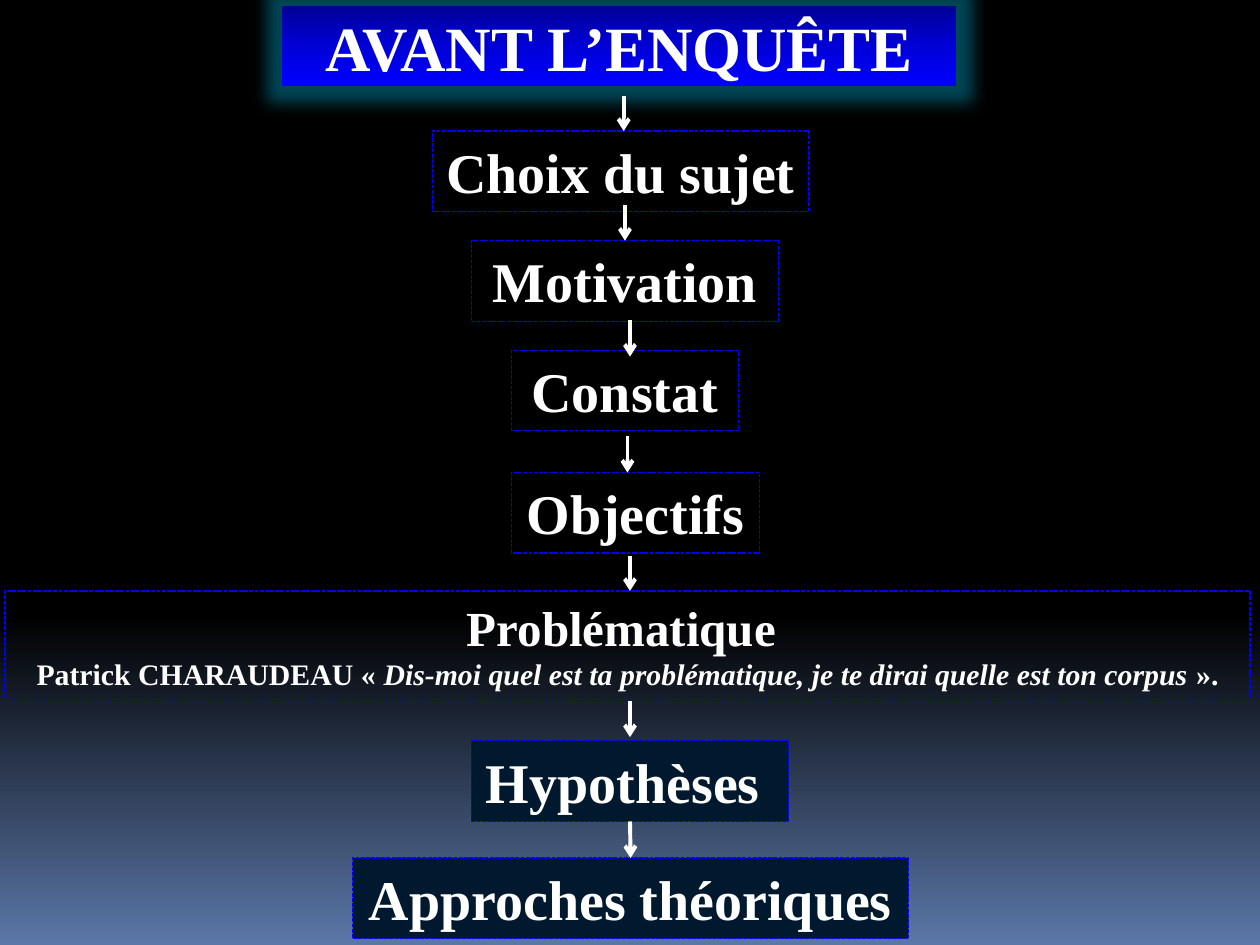
from lxml import etree
from pptx import Presentation
from pptx.dml.color import RGBColor
from pptx.enum.dml import MSO_LINE
from pptx.enum.shapes import MSO_CONNECTOR, MSO_SHAPE
from pptx.enum.text import MSO_ANCHOR, MSO_AUTO_SIZE, PP_ALIGN
from pptx.oxml import parse_xml
from pptx.oxml.ns import nsdecls, qn
from pptx.util import Inches, Pt

TITLE = "AVANT L’ENQUÊTE"
TITLE_BOX = (2.24, 0.05, 5.35, 0.63)
TITLE_GRADIENT = [(0, "000097"), (50, "0000D7"), (100, "0000FF")]
BACKGROUND_GRADIENT = [(0, "000000"), (65, "000000"), (100, "5B77A8")]
WHITE, BLUE, NAVY = "FFFFFF", "0000FF", "00192F"

# Each step: box, fill, paragraphs of (text, size, italic) runs
STEPS = [
    ((3.43, 1.04, 2.99, 0.64), None, [[("Choix du sujet", 32, False)]]),
    ((3.74, 1.91, 2.44, 0.64), None, [[("Motivation", 32, False)]]),
    ((4.06, 2.78, 1.80, 0.64), None, [[("Constat", 32, False)]]),
    ((4.06, 3.75, 1.97, 0.64), None, [[("Objectifs", 32, False)]]),
    ((0.04, 4.69, 9.88, 0.86), None, [
        [("Problématique ", 28, False)],
        [("Patrick CHARAUDEAU « ", 17, False),
         ("Dis-moi quel est ta problématique, je te dirai quelle est ton corpus ", 17, True),
         ("».", 17, False)],
    ]),
    ((3.74, 5.88, 2.52, 0.64), NAVY, [[("Hypothèses ", 32, False)]]),
    ((2.80, 6.81, 4.41, 0.64), NAVY, [[("Approches théoriques ", 32, False)]]),
]
# The arrow into each step: x, top, bottom, whether each end is joined to its box
ARROWS = [
    (4.95, 0.76, 1.04, False, False),
    (4.96, 1.63, 1.92, False, True),
    (5.00, 2.54, 2.83, False, False),
    (4.98, 3.46, 3.75, False, False),
    (5.00, 4.41, 4.69, False, False),
    (5.00, 5.56, 5.85, False, False),
    (5.00, 6.51, 6.79, True, True),
]


def color(value):
    return RGBColor.from_string(value)


def set_gradient(fill_parent, stops):
    """Replace the gradient under fill_parent with a top-to-bottom one."""
    stop_xml = "".join(
        f'<a:gs pos="{position * 1000}"><a:srgbClr val="{value}"/></a:gs>'
        for position, value in stops)
    gradient = parse_xml(
        f'<a:gradFill {nsdecls("a")} rotWithShape="1"><a:gsLst>{stop_xml}</a:gsLst>'
        '<a:lin ang="5400000" scaled="0"/></a:gradFill>')
    fill_parent.replace(fill_parent.find(qn("a:gradFill")), gradient)


def write_text(shape, paragraphs):
    frame = shape.text_frame
    frame.word_wrap = True
    for index, runs in enumerate(paragraphs):
        paragraph = frame.paragraphs[0] if index == 0 else frame.add_paragraph()
        paragraph.alignment = PP_ALIGN.CENTER
        for text, size, italic in runs:
            run = paragraph.add_run()
            run.text = text
            run.font.color.rgb = color(WHITE)
            formats = {"name": "Times New Roman", "size": Pt(size),
                       "bold": True, "italic": italic}
            for name, value in formats.items():
                setattr(run.font, name, value)


def add_title(slide):
    title = slide.shapes.title
    title.left, title.top, title.width, title.height = map(Inches, TITLE_BOX)
    write_text(title, [[(TITLE, 36, False)]])
    title.text_frame.vertical_anchor = MSO_ANCHOR.MIDDLE
    title.text_frame.auto_size = MSO_AUTO_SIZE.NONE
    title.fill.gradient()
    properties = title.element.spPr
    set_gradient(properties, TITLE_GRADIENT)
    properties.append(parse_xml(
        f'<a:effectLst {nsdecls("a")}>'
        f'<a:glow rad="{Pt(18)}"><a:srgbClr val="00B0D8"><a:alpha val="40000"/></a:srgbClr></a:glow>'
        f'<a:outerShdw blurRad="{Pt(3.5)}" dist="{Pt(2.2)}" dir="5400000" rotWithShape="0">'
        '<a:srgbClr val="000000"><a:alpha val="32000"/></a:srgbClr></a:outerShdw>'
        '</a:effectLst>'))


def add_step(slide, box, fill, paragraphs):
    shape = slide.shapes.add_shape(MSO_SHAPE.RECTANGLE, *map(Inches, box))
    shape.shadow.inherit = False
    if fill:
        shape.fill.solid()
        shape.fill.fore_color.rgb = color(fill)
    else:
        shape.fill.background()
    shape.line.color.rgb = color(BLUE)
    shape.line.width = Pt(0.75)
    shape.line.dash_style = MSO_LINE.SQUARE_DOT
    write_text(shape, paragraphs)
    shape.text_frame.vertical_anchor = MSO_ANCHOR.TOP
    shape.text_frame.auto_size = MSO_AUTO_SIZE.SHAPE_TO_FIT_TEXT
    return shape


def add_arrow(slide, x, top, bottom):
    arrow = slide.shapes.add_connector(
        MSO_CONNECTOR.STRAIGHT, Inches(x), Inches(top), Inches(x), Inches(bottom))
    arrow.line.color.rgb = color(WHITE)
    arrow.line.width = Pt(2.25)
    properties = arrow.element.spPr
    etree.SubElement(properties.find(qn("a:ln")), qn("a:tailEnd"), type="arrow")
    etree.SubElement(properties, qn("a:effectLst"))
    return arrow


def main():
    presentation = Presentation()
    presentation.slide_width, presentation.slide_height = Inches(10), Inches(7.5)
    slide = presentation.slides.add_slide(presentation.slide_layouts[5])
    slide.background.fill.gradient()
    set_gradient(slide.element.cSld.bg.bgPr, BACKGROUND_GRADIENT)

    add_title(slide)
    steps = [add_step(slide, *step) for step in STEPS]
    for index, (x, top, bottom, join_begin, join_end) in enumerate(ARROWS):
        arrow = add_arrow(slide, x, top, bottom)
        if join_begin:
            arrow.begin_connect(steps[index - 1], 2)
        if join_end:
            arrow.end_connect(steps[index], 0)
    presentation.save("out.pptx")


if __name__ == "__main__":
    main()
